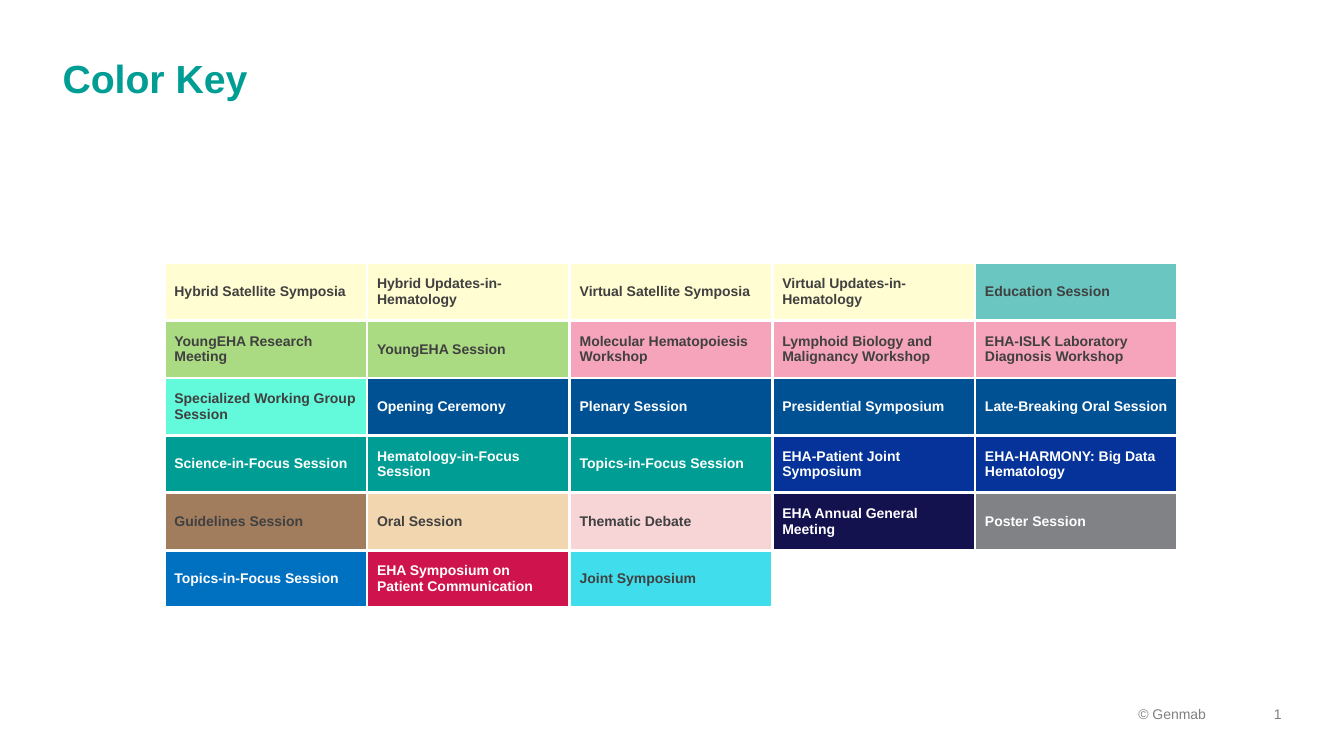
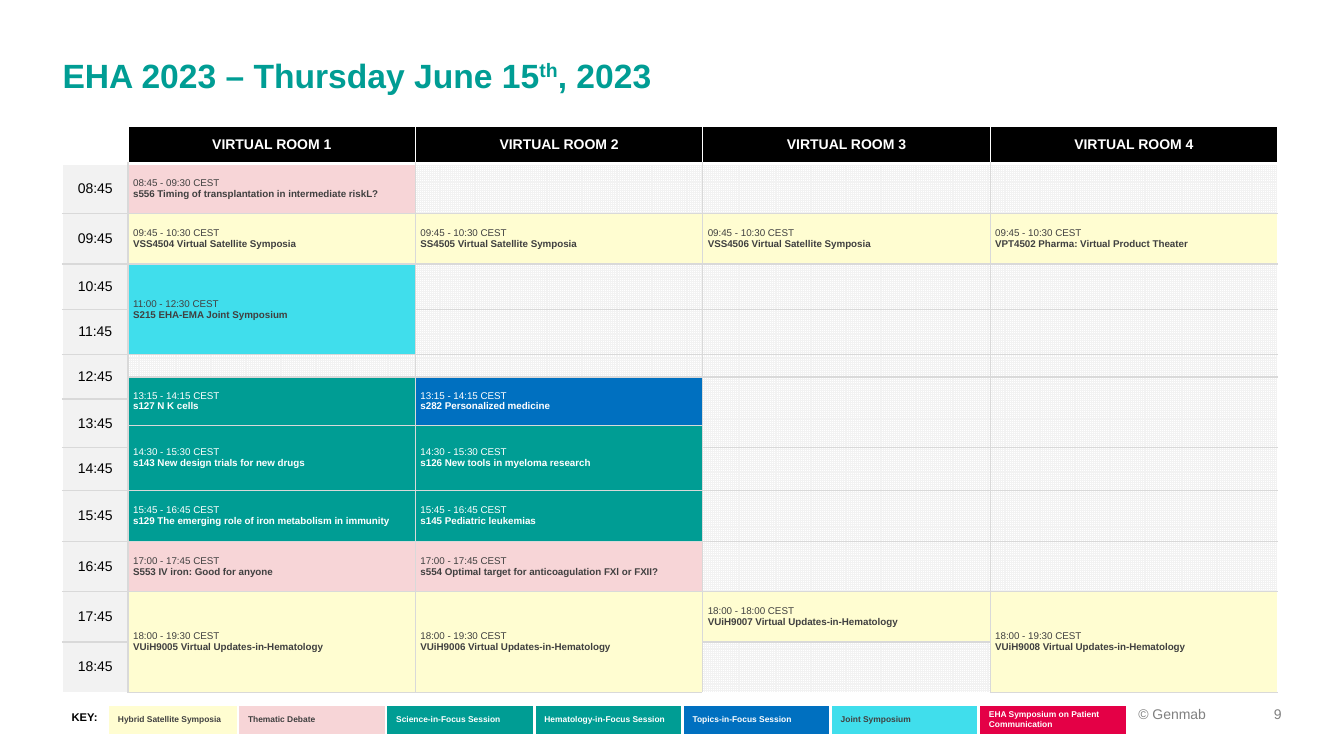
from dataclasses import dataclass

from lxml import etree
from pptx import Presentation
from pptx.dml.color import RGBColor
from pptx.enum.dml import MSO_PATTERN
from pptx.enum.text import MSO_ANCHOR, PP_ALIGN
from pptx.oxml.ns import qn
from pptx.util import Inches, Pt

LEFT, CENTER, RIGHT = PP_ALIGN.LEFT, PP_ALIGN.CENTER, PP_ALIGN.RIGHT
MIDDLE = MSO_ANCHOR.MIDDLE
SMALL_GRID = MSO_PATTERN.SMALL_GRID
SIDES = ("left", "right", "top", "bottom")
BORDER_TAGS = {"left": "a:lnL", "right": "a:lnR", "top": "a:lnT", "bottom": "a:lnB"}


@dataclass(frozen=True)
class Theme:
    font: str = "Arial"
    teal: str = "009D94"
    dark: str = "404040"
    black: str = "000000"
    white: str = "FFFFFF"
    grey: str = "808080"
    pale: str = "F2F2F2"
    rule: str = "D9D9D9"
    cream: str = "FFFDD1"
    rose: str = "F7D5D7"
    cyan: str = "40DEEC"
    blue: str = "0070C0"
    green: str = "AADA82"
    pink: str = "F6A4BC"
    navy: str = "005193"
    royal: str = "053399"
    midnight: str = "14114F"
    steel: str = "818285"
    crimson: str = "CF144D"
    red: str = "E40046"
    title_size: int = 28
    long_title_size: int = 24
    body_size: int = 10
    label_size: int = 8
    session_size: int = 7
    key_size: int = 6
    thin: float = 1
    thick: float = 2.25


THEME = Theme()
LIGHT_TEXT_FILLS = {
    THEME.teal, THEME.blue, THEME.navy, THEME.royal,
    THEME.midnight, THEME.steel, THEME.crimson, THEME.red,
}

COLOR_KEY = [
    [("Hybrid Satellite Symposia", THEME.cream),
     ("Hybrid Updates-in-Hematology", THEME.cream),
     ("Virtual Satellite Symposia", THEME.cream),
     ("Virtual Updates-in-Hematology", THEME.cream),
     ("Education Session", "6AC6C0")],
    [("YoungEHA Research Meeting", THEME.green),
     ("YoungEHA Session", THEME.green),
     ("Molecular Hematopoiesis Workshop", THEME.pink),
     ("Lymphoid Biology and Malignancy Workshop", THEME.pink),
     ("EHA-ISLK Laboratory Diagnosis Workshop", THEME.pink)],
    [("Specialized Working Group Session", "63F9DB"),
     ("Opening Ceremony", THEME.navy),
     ("Plenary Session", THEME.navy),
     ("Presidential Symposium", THEME.navy),
     ("Late-Breaking Oral Session", THEME.navy)],
    [("Science-in-Focus Session", THEME.teal),
     ("Hematology-in-Focus Session", THEME.teal),
     ("Topics-in-Focus Session", THEME.teal),
     ("EHA-Patient Joint Symposium", THEME.royal),
     ("EHA-HARMONY: Big Data Hematology", THEME.royal)],
    [("Guidelines Session", "A17D5E"),
     ("Oral Session", "F2D6B0"),
     ("Thematic Debate", THEME.rose),
     ("EHA Annual General Meeting", THEME.midnight),
     ("Poster Session", THEME.steel)],
    [("Topics-in-Focus Session", THEME.blue),
     ("EHA Symposium on Patient Communication", THEME.crimson),
     ("Joint Symposium", THEME.cyan)],
]

DAY_KEY = [[
    ("Hybrid Satellite Symposia", THEME.cream),
    ("Thematic Debate", THEME.rose),
    ("Science-in-Focus Session", THEME.teal),
    ("Hematology-in-Focus Session", THEME.teal),
    ("Topics-in-Focus Session", THEME.blue),
    ("Joint Symposium", THEME.cyan),
    ("EHA Symposium on Patient Communication", THEME.red),
]]

ROOMS = [f"VIRTUAL ROOM {number}" for number in range(1, 5)]
ROW_HEIGHTS = [0.37, 0.5, 0.5, 0.45, 0.45, 0.22, 0.22, 0.26, 0.22, 0.43] + [0.5] * 4

# row, rows covered, label
TIMES = [
    (1, 1, "08:45"), (2, 1, "09:45"), (3, 1, "10:45"), (4, 1, "11:45"),
    (5, 2, "12:45"), (7, 2, "13:45"), (9, 1, "14:45"), (10, 1, "15:45"),
    (11, 1, "16:45"), (12, 1, "17:45"), (13, 1, "18:45"),
]

# row, room, rows covered, fill, hours, title
SESSIONS = [
    (1, 1, 1, THEME.rose, "08:45 - 09:30", "s556 Timing of transplantation in intermediate riskL?"),
    (2, 1, 1, THEME.cream, "09:45 - 10:30", "VSS4504 Virtual Satellite Symposia"),
    (2, 2, 1, THEME.cream, "09:45 - 10:30", "SS4505 Virtual Satellite Symposia"),
    (2, 3, 1, THEME.cream, "09:45 - 10:30", "VSS4506 Virtual Satellite Symposia"),
    (2, 4, 1, THEME.cream, "09:45 - 10:30", "VPT4502 Pharma: Virtual Product Theater"),
    (3, 1, 2, THEME.cyan, "11:00 - 12:30", "S215 EHA-EMA Joint Symposium"),
    (6, 1, 2, THEME.teal, "13:15 - 14:15", "s127 N K cells"),
    (6, 2, 2, THEME.blue, "13:15 - 14:15", "s282 Personalized medicine"),
    (8, 1, 2, THEME.teal, "14:30 - 15:30", "s143 New design trials for new drugs"),
    (8, 2, 2, THEME.teal, "14:30 - 15:30", "s126 New tools in myeloma research"),
    (10, 1, 1, THEME.teal, "15:45 - 16:45", "s129 The emerging role of iron metabolism in immunity"),
    (10, 2, 1, THEME.teal, "15:45 - 16:45", "s145 Pediatric leukemias"),
    (11, 1, 1, THEME.rose, "17:00 - 17:45", "S553 IV iron: Good for anyone"),
    (11, 2, 1, THEME.rose, "17:00 - 17:45",
     "s554 Optimal target for anticoagulation FXl or FXII?"),
    (12, 1, 2, THEME.cream, "18:00 - 19:30", "VUiH9005 Virtual Updates-in-Hematology"),
    (12, 2, 2, THEME.cream, "18:00 - 19:30", "VUiH9006 Virtual Updates-in-Hematology"),
    (12, 3, 1, THEME.cream, "18:00 - 18:00", "VUiH9007 Virtual Updates-in-Hematology"),
    (12, 4, 2, THEME.cream, "18:00 - 19:30", "VUiH9008 Virtual Updates-in-Hematology"),
]


def rgb(code):
    return RGBColor.from_string(code)


def add_span(para, text, size, color, bold=False, baseline=None):
    span = para.add_run()
    span.text = text
    formats = {"name": THEME.font, "size": Pt(size), "bold": bold}
    for name, value in formats.items():
        setattr(span.font, name, value)
    span.font.color.rgb = rgb(color)
    if baseline:
        span.font._element.set("baseline", str(baseline))


def add_text(page, place, spans, size, color, bold=False, align=LEFT, wrap=True):
    """Add a one-paragraph box; spans are (text, baseline) pairs."""
    frame = page.shapes.add_textbox(*map(Inches, place)).text_frame
    frame.word_wrap = wrap
    for side in SIDES:
        setattr(frame, f"margin_{side}", 0)
    para = frame.paragraphs[0]
    para.alignment = align
    for text, baseline in spans:
        add_span(para, text, size, color, bold, baseline)


def add_page(deck, title, title_size, number):
    page = deck.slides.add_slide(deck.slide_layouts[6])
    add_text(page, (0.62, 0.54, 12.08, 0.57), title, title_size, THEME.teal, bold=True)
    for left, width, text in ((10.44, 1.52, "© Genmab"), (11.96, 0.75, number)):
        add_text(page, (left, 7, width, 0.17), [(text, None)],
                 THEME.body_size, THEME.grey, align=RIGHT)
    return page


def set_borders(cell, borders):
    """Draw borders given as side: (colour, points), ahead of the cell's fill."""
    properties = cell._tc.get_or_add_tcPr()
    for index, side in enumerate(SIDES):
        color, width = borders[side]
        line = etree.Element(qn(BORDER_TAGS[side]), w=str(Pt(width)))
        paint = etree.SubElement(line, qn("a:solidFill"))
        etree.SubElement(paint, qn("a:srgbClr"), val=color)
        properties.insert(index, line)


def fill_cell(cell, color):
    cell.fill.solid()
    cell.fill.fore_color.rgb = rgb(color)


def hatch_cell(cell):
    cell.fill.patterned()
    cell.fill.pattern = SMALL_GRID
    cell.fill.fore_color.rgb = rgb(THEME.pale)
    cell.fill.back_color.rgb = rgb(THEME.white)


def write_cell(cell, lines, size, color, align=LEFT):
    """Write lines of (text, bold), one paragraph each."""
    cell.vertical_anchor = MIDDLE
    frame = cell.text_frame
    for index, (text, bold) in enumerate(lines):
        para = frame.add_paragraph() if index else frame.paragraphs[0]
        para.alignment = align
        add_span(para, text, size, color, bold)


def add_grid(page, left, top, widths, heights):
    """Add a table with no style banding, no fills and small empty cells."""
    frame = page.shapes.add_table(
        len(heights), len(widths), Inches(left), Inches(top),
        Inches(sum(widths)), Inches(sum(heights)))
    table = frame.table
    table.first_row = table.horz_banding = False
    for column, width in zip(table.columns, widths):
        column.width = Inches(width)
    for row, height in zip(table.rows, heights):
        row.height = Inches(height)
    for cell in table.iter_cells():
        cell.fill.background()
        para = cell.text_frame.paragraphs[0]
        etree.SubElement(para._p, qn("a:endParaRPr"), sz=str(THEME.key_size * 100))
    return table


def add_key(page, left, top, widths, heights, entries, size):
    table = add_grid(page, left, top, widths, heights)
    for row, row_entries in enumerate(entries):
        for column, (label, fill) in enumerate(row_entries):
            cell = table.cell(row, column)
            fill_cell(cell, fill)
            write_cell(cell, [(label, True)], size, text_color(fill))
    for cell in table.iter_cells():
        set_borders(cell, dict.fromkeys(SIDES, (THEME.white, THEME.thick)))


def text_color(fill):
    return THEME.white if fill in LIGHT_TEXT_FILLS else THEME.dark


def schedule_borders(row, column, last_row, last_column):
    """White round the outside and header, grey rules between sessions."""
    white, grey = (THEME.white, THEME.thin), (THEME.rule, THEME.thin)
    heavy = (THEME.white, THEME.thick)
    if row == 0:
        return {"left": white, "right": white, "top": white, "bottom": heavy}
    return {
        "left": grey if column else white,
        "right": white if column == last_column else grey,
        "top": heavy if row == 1 else grey,
        "bottom": white if row == last_row else grey,
    }


def add_schedule(page, left, top):
    widths = [0.65] + [2.85] * len(ROOMS)
    table = add_grid(page, left, top, widths, ROW_HEIGHTS)
    last_row, last_column = len(ROW_HEIGHTS) - 1, len(ROOMS)

    for row in range(last_row + 1):
        for column in range(last_column + 1):
            cell = table.cell(row, column)
            if row and column:
                hatch_cell(cell)
            elif row:
                fill_cell(cell, THEME.pale)
            set_borders(cell, schedule_borders(row, column, last_row, last_column))

    def take_cell(row, column, rows):
        cell = table.cell(row, column)
        if rows > 1:
            cell.merge(table.cell(row + rows - 1, column))
        return cell

    for column, room in enumerate(ROOMS, start=1):
        cell = table.cell(0, column)
        fill_cell(cell, THEME.black)
        write_cell(cell, [(room, True)], THEME.body_size, THEME.white, CENTER)
    for row, rows, label in TIMES:
        write_cell(take_cell(row, 0, rows), [(label, False)],
                   THEME.body_size, THEME.black, CENTER)
    for row, room, rows, fill, hours, title in SESSIONS:
        cell = take_cell(row, room, rows)
        fill_cell(cell, fill)
        for side in SIDES:
            setattr(cell, f"margin_{side}", Inches(0.05))
        write_cell(cell, [(f"{hours} CEST", False), (title, True)],
                   THEME.session_size, text_color(fill))
    for free_room in (3, 4):
        take_cell(6, free_room, 3)


def main():
    deck = Presentation()
    deck.slide_width, deck.slide_height = Inches(13.33), Inches(7.5)

    page = add_page(deck, [("Color Key", None)], THEME.title_size, "1")
    add_key(page, 1.63, 2.61, [2.01] * 5, [0.57] * 6, COLOR_KEY, THEME.body_size)

    date = [("EHA 2023 – Thursday June 15", None), ("th", 30000), (", 2023", None)]
    page = add_page(deck, date, THEME.long_title_size, "9")
    add_key(page, 1.07, 6.99, [1.29] + [1.47] * 6, [0.26], DAY_KEY, THEME.key_size)
    add_text(page, (0.71, 7.05, 0.27, 0.13), [("KEY:", None)],
             THEME.label_size, THEME.black, bold=True, wrap=False)
    add_schedule(page, 0.62, 1.25)

    deck.save("out.pptx")


if __name__ == "__main__":
    main()
